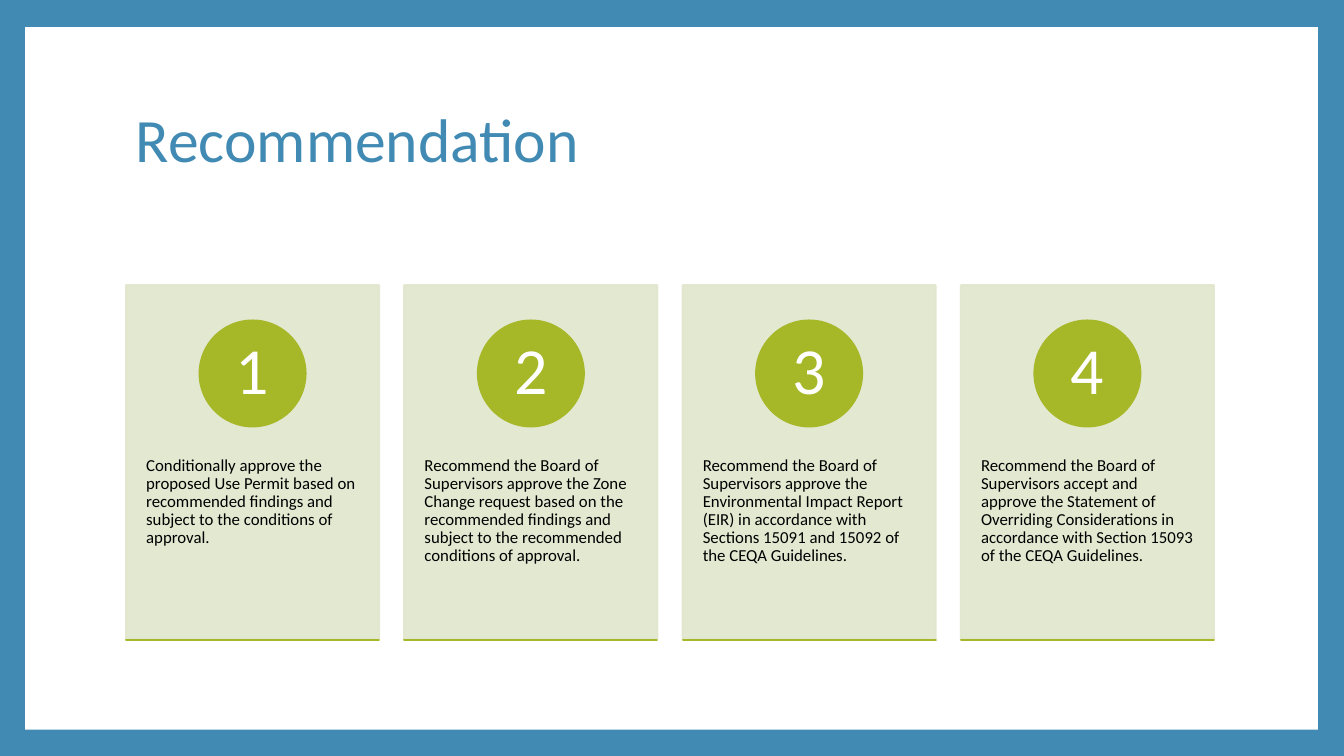
import pptx
import pptx.dml.color
import pptx.enum.shapes
import pptx.enum.text
import pptx.oxml.ns
import pptx.util
from lxml import etree

Inches = pptx.util.Inches
Pt = pptx.util.Pt
RGBColor = pptx.dml.color.RGBColor
SHAPE = pptx.enum.shapes.MSO_SHAPE
ANCHOR = pptx.enum.text.MSO_ANCHOR
ALIGN = pptx.enum.text.PP_ALIGN
qn = pptx.oxml.ns.qn

BLUE = RGBColor(0x41, 0x8A, 0xB3)
GREEN = RGBColor(0xA6, 0xB7, 0x27)
PALE_GREEN = RGBColor(0xE1, 0xE6, 0xCD)
WHITE = RGBColor(0xFF, 0xFF, 0xFF)
BLACK = RGBColor(0x00, 0x00, 0x00)

LEFT = 1.25
CARD_TOP = 2.83
CARD_WIDTH = 2.51
CARD_HEIGHT = 3.51
CARD_STEP = 2.76
CIRCLE_SIZE = 1.05

RECOMMENDATIONS = [
    "Conditionally approve the proposed Use Permit based on recommended findings "
    "and subject to the conditions of approval.",
    "Recommend the Board of Supervisors approve the Zone Change request based on "
    "the recommended findings and subject to the recommended conditions of approval.",
    "Recommend the Board of Supervisors approve the Environmental Impact Report "
    "(EIR) in accordance with Sections 15091 and 15092 of the CEQA Guidelines.",
    "Recommend the Board of Supervisors accept and approve the Statement of "
    "Overriding Considerations in accordance with Section 15093 of the CEQA Guidelines.",
]


def add_block(page, kind, left, top, width, height, color, outlined=True):
    block = page.shapes.add_shape(
        kind, Inches(left), Inches(top), Inches(width), Inches(height))
    block.shadow.inherit = False
    block.fill.solid()
    block.fill.fore_color.rgb = color
    if outlined:
        block.line.color.rgb = color
        block.line.width = Pt(1.5)
    else:
        block.line.fill.background()
    return block


def set_opacity(block, percent):
    for color in block._element.spPr.iter(qn("a:srgbClr")):
        etree.SubElement(color, qn("a:alpha"), val=str(percent * 1000))


def write_text(box, text, size, color, anchor=ANCHOR.TOP, align=ALIGN.LEFT,
               inset_x=0.1, inset_y=0.05):
    frame = box.text_frame
    frame.word_wrap = True
    frame.vertical_anchor = anchor
    frame.margin_left = frame.margin_right = Inches(inset_x)
    frame.margin_top = frame.margin_bottom = Inches(inset_y)
    para = frame.paragraphs[0]
    para.text = text
    para.alignment = align
    para.line_spacing = 0.9
    para.font.name = "Calibri"
    para.font.size = Pt(size)
    para.font.color.rgb = color


def add_text_box(page, left, top, width, height):
    return page.shapes.add_textbox(
        Inches(left), Inches(top), Inches(width), Inches(height))


def add_card(page, number, text):
    left = LEFT + (number - 1) * CARD_STEP
    card = add_block(page, SHAPE.RECTANGLE, left, CARD_TOP,
                     CARD_WIDTH, CARD_HEIGHT, PALE_GREEN)
    set_opacity(card, 90)

    body = add_text_box(page, left, 4.17, CARD_WIDTH, 2.11)
    write_text(body, text, 12, BLACK, inset_x=0.2, inset_y=0.36)

    circle = add_block(page, SHAPE.OVAL, left + (CARD_WIDTH - CIRCLE_SIZE) / 2, 3.18,
                       CIRCLE_SIZE, CIRCLE_SIZE, GREEN)
    write_text(circle, str(number), 47, WHITE, ANCHOR.MIDDLE, ALIGN.CENTER,
               inset_x=0.08, inset_y=0.01)

    add_block(page, SHAPE.RECTANGLE, left, CARD_TOP + CARD_HEIGHT + 0.01,
              CARD_WIDTH, 0, GREEN)


def main():
    deck = pptx.Presentation()
    deck.slide_width = Inches(13.33)
    deck.slide_height = Inches(7.5)
    page = deck.slides.add_slide(deck.slide_layouts[6])
    page.background.fill.solid()
    page.background.fill.fore_color.rgb = BLUE
    add_block(page, SHAPE.RECTANGLE, 0.25, 0.27, 12.82, 6.97, WHITE, outlined=False)

    title = add_text_box(page, LEFT, 0.67, 10.8, 1.48)
    write_text(title, "Recommendation", 44, BLUE, ANCHOR.MIDDLE)

    for number, text in enumerate(RECOMMENDATIONS, 1):
        add_card(page, number, text)
    deck.save("out.pptx")


if __name__ == "__main__":
    main()
